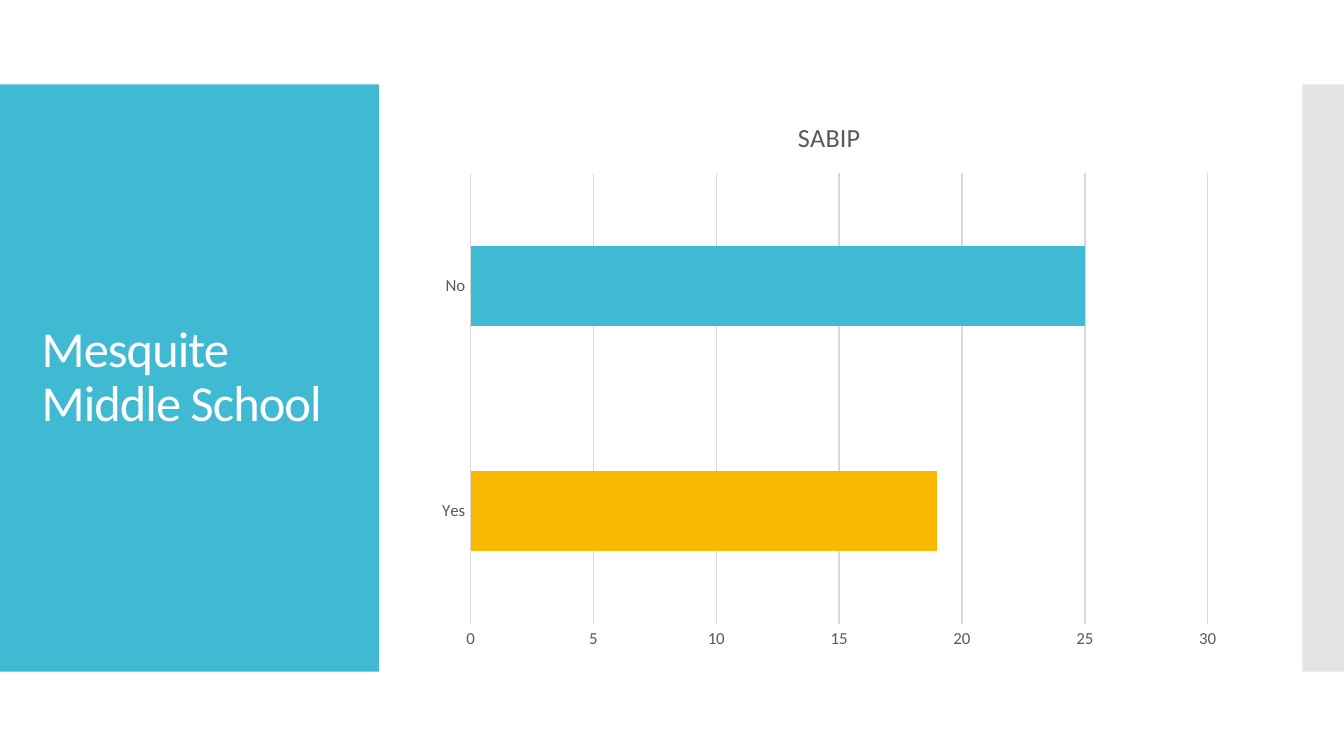
from pptx import Presentation
from pptx.chart.data import CategoryChartData
from pptx.dml.color import RGBColor
from pptx.enum.chart import XL_CHART_TYPE, XL_TICK_MARK
from pptx.enum.shapes import MSO_SHAPE
from pptx.enum.text import MSO_ANCHOR, MSO_AUTO_SIZE, PP_ALIGN
from pptx.oxml.ns import qn
from pptx.util import Inches, Pt
from lxml import etree

BAR_CLUSTERED = XL_CHART_TYPE.BAR_CLUSTERED
NO_TICK = XL_TICK_MARK.NONE
RECTANGLE = MSO_SHAPE.RECTANGLE
MIDDLE, LEFT, NO_AUTOFIT = MSO_ANCHOR.MIDDLE, PP_ALIGN.LEFT, MSO_AUTO_SIZE.NONE

TITLE = "Mesquite Middle School"
CHART_TITLE = "SABIP"
# answer, count, bar colour
ANSWERS = [("Yes", 19, "amber"), ("No", 25, "teal")]

THEME = {
    "font": "Calibri",
    "title_size": 27, "chart_title_size": 14, "axis_size": 9,
    "teal": "40BAD2", "amber": "FAB900", "grey": "C8C8C8",
    "title": "FFFFFF", "label": "595959", "grid": "D9D9D9",
}
SLIDE_W = 10
SLIDE_H = SLIDE_W * 9 / 16
BAND_H = 4.37
# left, width, colour, opacity in percent
PANELS = [(0, 2.82, "teal", 100), (9.69, 0.32, "grey", 50)]
# left, width, height
TITLE_BOX = (0.21, 2.42, 3.77)
CHART_BOX = (3.17, 6, 4.2)


def centered_box(left, width, height):
    """Left, top, width and height of a part centred vertically on the slide."""
    return [Inches(n) for n in (left, (SLIDE_H - height) / 2, width, height)]


def color(name):
    return RGBColor.from_string(THEME[name])


def style_font(font, size, color_name):
    font.name = THEME["font"]
    font.size = Pt(THEME[size])
    font.bold = False
    font.color.rgb = color(color_name)


def style_line(line):
    line.color.rgb = color("grid")
    line.width = Pt(0.75)


def add_panel(slide, left, width, color_name, opacity):
    panel = slide.shapes.add_shape(
        RECTANGLE, *centered_box(left, width, BAND_H))
    panel.shadow.inherit = False
    panel.line.fill.background()
    panel.fill.solid()
    panel.fill.fore_color.rgb = color(color_name)
    if opacity < 100:
        rgb = panel._element.spPr.find(qn("a:solidFill")).find(qn("a:srgbClr"))
        etree.SubElement(rgb, qn("a:alpha")).set("val", str(opacity * 1000))


def place_title(slide):
    title = slide.shapes.title
    title.left, title.top, title.width, title.height = centered_box(*TITLE_BOX)
    slide.shapes._spTree.append(title._element)  # in front of the panels
    frame = title.text_frame
    frame.text = TITLE
    frame.word_wrap = True
    frame.auto_size = NO_AUTOFIT
    frame.vertical_anchor = MIDDLE
    paragraph = frame.paragraphs[0]
    paragraph.alignment = LEFT
    paragraph.line_spacing = 0.9
    run = paragraph.runs[0]
    style_font(run.font, "title_size", "title")
    run._r.get_or_add_rPr().set("spc", "-50")


def add_answer_chart(slide):
    answers, counts, bar_colors = zip(*ANSWERS)
    data = CategoryChartData()
    data.categories = answers
    data.add_series("Series 1", counts)
    chart = slide.shapes.add_chart(
        BAR_CLUSTERED, *centered_box(*CHART_BOX), data).chart
    style_font(chart.font, "axis_size", "label")
    chart.has_legend = False
    chart.has_title = True
    heading = chart.chart_title.text_frame
    heading.text = CHART_TITLE
    style_font(heading.paragraphs[0].runs[0].font, "chart_title_size", "label")

    plot = chart.plots[0]
    plot.gap_width = 182
    plot.vary_by_categories = False
    series = plot.series[0]
    series.format.fill.solid()
    series.format.fill.fore_color.rgb = color("teal")
    for index, bar_color in enumerate(bar_colors):
        fill = series.points[index].format.fill
        fill.solid()
        fill.fore_color.rgb = color(bar_color)

    for axis in (chart.category_axis, chart.value_axis):
        axis.major_tick_mark = axis.minor_tick_mark = NO_TICK
        style_font(axis.tick_labels.font, "axis_size", "label")
    style_line(chart.category_axis.format.line)
    counts_axis = chart.value_axis
    counts_axis.minimum_scale, counts_axis.maximum_scale = 0, 30
    counts_axis.major_unit = 5
    counts_axis.format.line.fill.background()
    counts_axis.has_major_gridlines = True
    style_line(counts_axis.major_gridlines.format.line)


def main():
    deck = Presentation()
    deck.slide_width, deck.slide_height = Inches(SLIDE_W), Inches(SLIDE_H)
    slide = deck.slides.add_slide(deck.slide_layouts[5])
    for panel in PANELS:
        add_panel(slide, *panel)
    place_title(slide)
    add_answer_chart(slide)
    deck.save("out.pptx")


if __name__ == "__main__":
    main()
